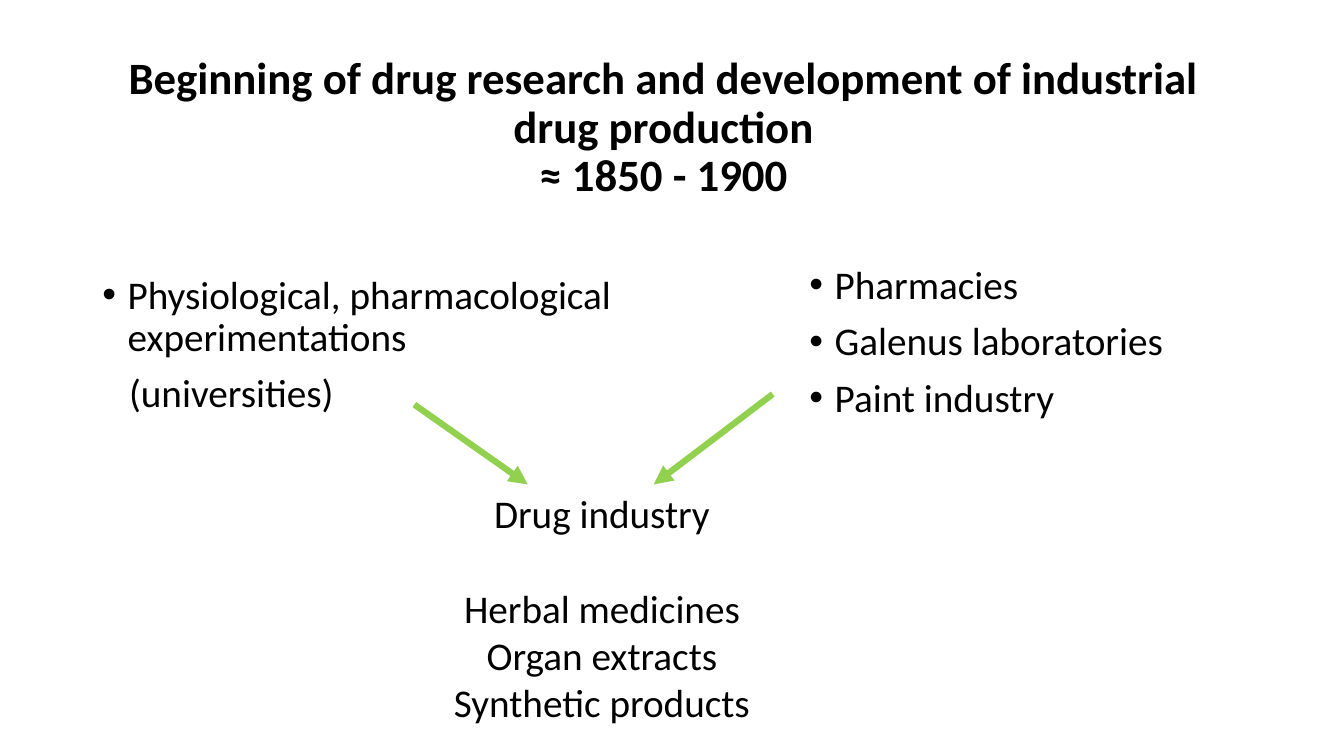
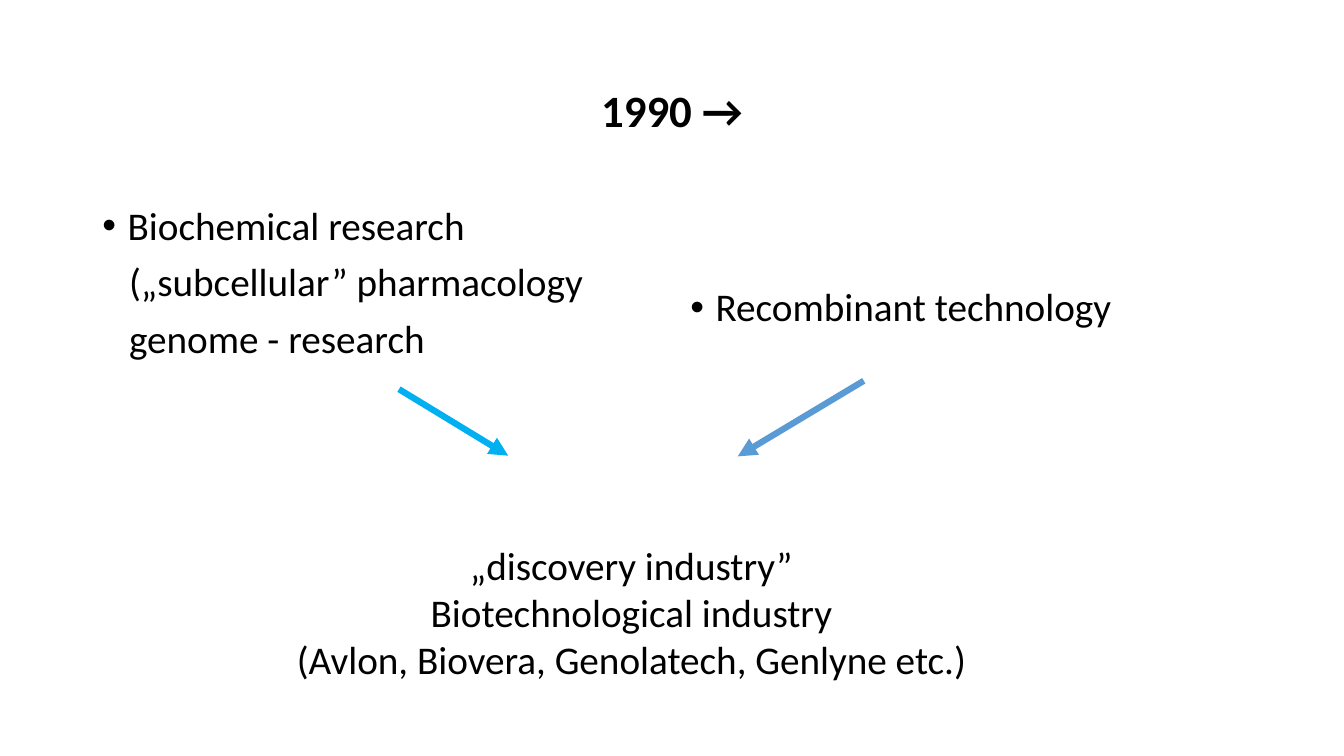
from dataclasses import dataclass

from lxml.etree import SubElement
from pptx import Presentation
from pptx.dml.color import RGBColor
from pptx.enum.shapes import MSO_CONNECTOR
from pptx.enum.text import MSO_ANCHOR, MSO_AUTO_SIZE, PP_ALIGN
from pptx.oxml.ns import qn
from pptx.util import Pt

FONT = "Calibri"
BLACK, GREEN, CYAN, BLUE = "000000", "92D050", "00B0F0", "5B9BD5"
TITLE_SIZE, TEXT_SIZE = 32, 28
BULLET_INDENT, PLAIN_INDENT = 18, 19


@dataclass
class Box:
    left: float
    top: float
    width: float
    height: float


@dataclass
class Line:
    text: str
    bullet: bool = False
    before: float = 0


@dataclass
class Block:
    box: Box
    lines: list[Line]


@dataclass
class Arrow:
    start: tuple[float, float]
    end: tuple[float, float]
    color: str


@dataclass
class Topic:
    title: list[str]
    title_box: Box
    sources: list[Block]
    arrows: list[Arrow]
    outcome: Block


def rgb(color: str) -> RGBColor:
    return RGBColor.from_string(color)


def place(sp, box: Box) -> None:
    sp.left, sp.top = Pt(box.left), Pt(box.top)
    sp.width, sp.height = Pt(box.width), Pt(box.height)


def add_run(p, text: str, size: float, bold: bool = False) -> None:
    r = p.add_run()
    r.text = text
    r.font.name, r.font.size, r.font.bold = FONT, Pt(size), bold
    r.font.color.rgb = rgb(BLACK)


def paragraphs(tf, lines: list[Line]):
    """Yield each line with its paragraph, reusing the empty first one."""
    for i, line in enumerate(lines):
        yield line, tf.add_paragraph() if i else tf.paragraphs[0]


def set_indent(p, bullet: bool) -> None:
    pPr = p._p.get_or_add_pPr()
    left = BULLET_INDENT if bullet else PLAIN_INDENT
    pPr.set("marL", str(Pt(left)))
    pPr.set("indent", str(-Pt(left) if bullet else 0))
    if bullet:
        SubElement(pPr, qn("a:buFont")).set("typeface", "Arial")
        SubElement(pPr, qn("a:buChar")).set("char", "•")
    else:
        SubElement(pPr, qn("a:buNone"))


def fill_title(sp, rows: list[str], box: Box) -> None:
    place(sp, box)
    tf = sp.text_frame
    tf.auto_size, tf.vertical_anchor = MSO_AUTO_SIZE.NONE, MSO_ANCHOR.MIDDLE
    p = tf.paragraphs[0]
    p.alignment, p.line_spacing = PP_ALIGN.CENTER, 0.9
    for i, row in enumerate(rows):
        if i:
            p.add_line_break()
        add_run(p, row, TITLE_SIZE, bold=True)


def fill_body(sp, block: Block) -> None:
    place(sp, block.box)
    tf = sp.text_frame
    tf.auto_size, tf.vertical_anchor = MSO_AUTO_SIZE.NONE, MSO_ANCHOR.TOP
    for line, p in paragraphs(tf, block.lines):
        p.alignment, p.line_spacing, p.space_before = PP_ALIGN.LEFT, 0.9, Pt(10)
        set_indent(p, line.bullet)
        add_run(p, line.text, TEXT_SIZE)


def add_outcome(s, block: Block) -> None:
    b = block.box
    sp = s.shapes.add_textbox(Pt(b.left), Pt(b.top), Pt(b.width), Pt(b.height))
    tf = sp.text_frame
    tf.word_wrap = True
    for line, p in paragraphs(tf, block.lines):
        p.alignment, p.space_before = PP_ALIGN.CENTER, Pt(line.before)
        add_run(p, line.text, TEXT_SIZE)


def add_arrow(s, arrow: Arrow) -> None:
    ends = [Pt(v) for v in (*arrow.start, *arrow.end)]
    sp = s.shapes.add_connector(MSO_CONNECTOR.STRAIGHT, *ends)
    sp.line.color.rgb, sp.line.width = rgb(arrow.color), Pt(4.5)
    spPr = sp._element.spPr
    SubElement(spPr.find(qn("a:ln")), qn("a:tailEnd")).set("type", "triangle")
    SubElement(spPr, qn("a:effectLst"))


def add_topic(prs, topic: Topic) -> None:
    s = prs.slides.add_slide(prs.slide_layouts.get_by_name("Two Content"))
    title, *bodies = s.placeholders
    fill_title(title, topic.title, topic.title_box)
    for sp, block in zip(bodies, topic.sources):
        fill_body(sp, block)
    for arrow in topic.arrows:
        add_arrow(s, arrow)
    add_outcome(s, topic.outcome)


TOPICS = [
    # Early drug industry
    Topic(
        ["Beginning of drug research and development of industrial drug production",
         "≈ 1850 - 1900"],
        Box(60, 39.6, 828, 104.4),
        [Block(Box(66, 193, 408, 116),
               [Line("Physiological, pharmacological experimentations", True),
                Line("(universities)")]),
         Block(Box(571, 186, 317, 130),
               [Line("Pharmacies", True),
                Line("Galenus laboratories", True),
                Line("Paint industry", True)])],
        [Arrow((296, 289), (377, 346), GREEN),
         Arrow((552, 281.5), (467, 346), GREEN)],
        Block(Box(271, 346, 318, 177),
              [Line("Drug industry"), Line("Herbal medicines", before=34),
               Line("Organ extracts"), Line("Synthetic products")]),
    ),
    # Biotechnology
    Topic(
        ["1990 →"],
        Box(66, 28.8, 828, 104.4),
        [Block(Box(66, 144, 408, 128),
               [Line("Biochemical research", True),
                Line("(„subcellular” pharmacology"),
                Line("genome - research")]),
         Block(Box(486, 202, 408, 50), [Line("Recombinant technology", True)])],
        [Arrow((285, 278), (363, 325.5), CYAN),
         Arrow((617, 272), (527, 326), BLUE)],
        Block(Box(171, 383, 560, 109),
              [Line("„discovery industry”"), Line("Biotechnological industry"),
               Line("(Avlon, Biovera, Genolatech, Genlyne etc.)")]),
    ),
]


def main() -> None:
    prs = Presentation()
    prs.slide_width, prs.slide_height = Pt(960), Pt(540)
    for topic in TOPICS:
        add_topic(prs, topic)
    prs.save("out.pptx")


if __name__ == "__main__":
    main()
